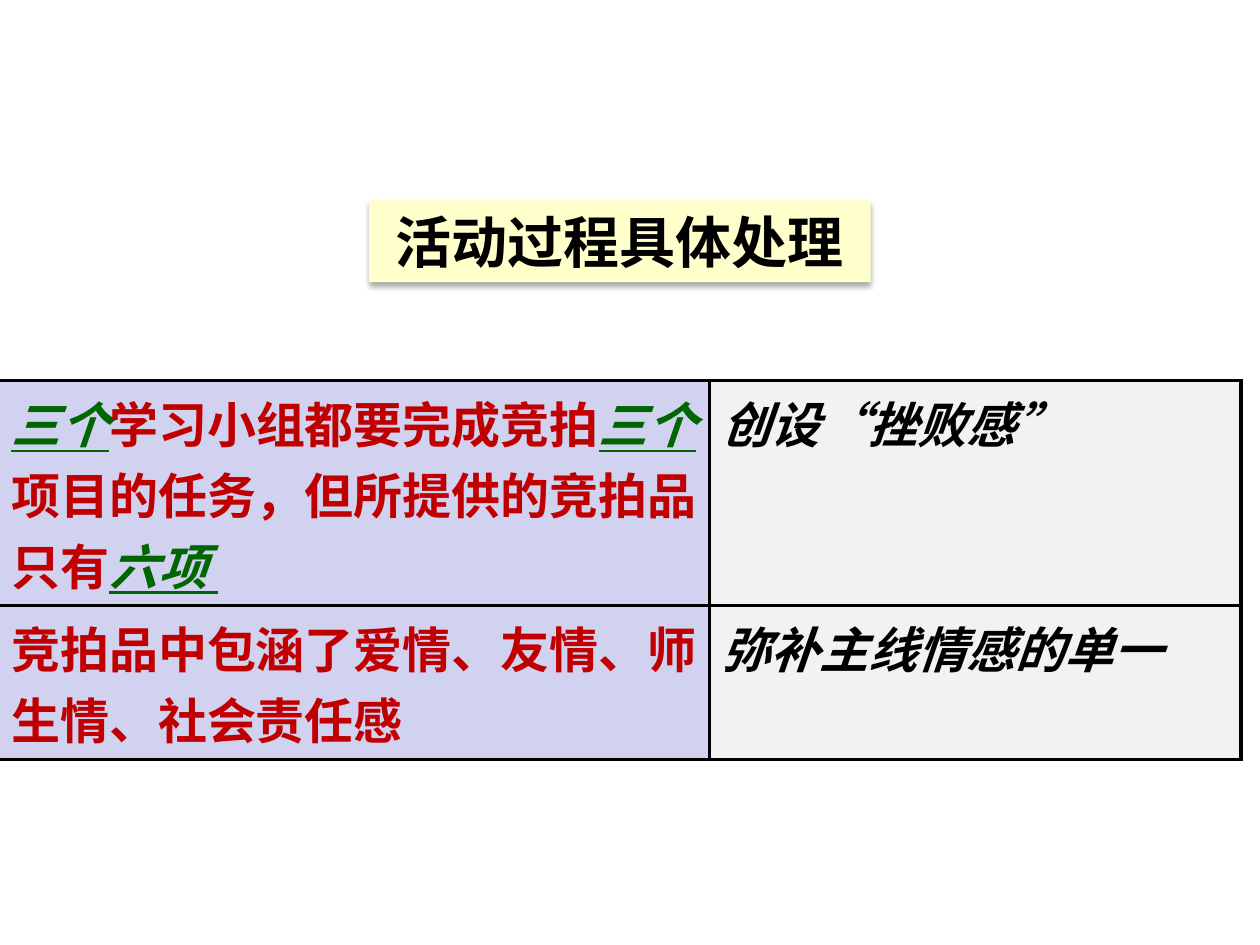
from lxml import etree
from pptx import Presentation
from pptx.dml.color import RGBColor
from pptx.enum.shapes import MSO_SHAPE
from pptx.enum.text import MSO_ANCHOR, PP_ALIGN
from pptx.oxml import parse_xml
from pptx.oxml.ns import nsdecls, qn
from pptx.util import Inches, Pt

RECT = MSO_SHAPE.RECTANGLE
MIDDLE = MSO_ANCHOR.MIDDLE
CENTER = PP_ALIGN.CENTER

FONT = "Noto Sans CJK SC"
COLORS = {
    "black": "000000",
    "red": "C00000",
    "green": "006600",
    "title": "FFFFCC",
    "event": "D1D1F0",
    "purpose": "F2F2F2",
}
# style: colour, italic, underline
STYLES = {
    "plain": ("red", False, False),
    "key": ("green", True, True),
    "purpose": ("black", True, False),
    "title": ("black", False, False),
}

TITLE = "活动过程具体处理"
ROWS = [
    (
        [
            ("三个", "key"),
            ("学习小组都要完成竞拍", "plain"),
            ("三个", "key"),
            ("项目的任务，但所提供的竞拍品只有", "plain"),
            ("六项 ", "key"),
        ],
        [("创设“挫败感”", "purpose")],
    ),
    (
        [("竞拍品中包涵了爱情、友情、师生情、社会责任感", "plain")],
        [("弥补主线情感的单一", "purpose")],
    ),
]
FILLS = ("event", "purpose")
COL_WIDTHS = (5.64, 4.22)
ROW_HEIGHTS = (1.5, 1.03)
BORDER = 2.25


def rgb(name):
    return RGBColor.from_string(COLORS[name])


def add_run(p, text, style, size):
    color, italic, underline = STYLES[style]
    r = p.add_run()
    r.text = text
    font = r.font
    font.name, font.size, font.bold = FONT, Pt(size), True
    font.italic, font.underline = italic, underline
    font.color.rgb = rgb(color)
    ea = etree.SubElement(font._element, qn("a:ea"))
    ea.set("typeface", FONT)


def add_shadow(sp, alpha, blur, dist):
    """Give a shape a soft black shadow straight below it."""
    sp.shadow.inherit = False
    effects = sp._element.spPr.find(qn("a:effectLst"))
    effects.append(parse_xml(
        f'<a:outerShdw {nsdecls("a")} blurRad="{Pt(blur)}" dist="{Pt(dist)}" '
        f'dir="5400000" rotWithShape="0"><a:srgbClr val="{COLORS["black"]}">'
        f'<a:alpha val="{alpha * 1000}"/></a:srgbClr></a:outerShdw>'))


def add_borders(cell):
    tcPr = cell._tc.get_or_add_tcPr()
    for i, side in enumerate(("lnL", "lnR", "lnT", "lnB")):
        tcPr.insert(i, parse_xml(
            f'<a:{side} {nsdecls("a")} w="{Pt(BORDER)}"><a:solidFill>'
            f'<a:srgbClr val="{COLORS["black"]}"/></a:solidFill></a:{side}>'))


def add_title(slide):
    sp = slide.shapes.add_shape(RECT, Inches(2.93), Inches(1.59), Inches(3.98), Inches(0.65))
    sp.fill.solid()
    sp.fill.fore_color.rgb = rgb("title")
    sp.line.fill.background()
    add_shadow(sp, 32, 3.5, 2.2)
    tf = sp.text_frame
    tf.word_wrap = True
    tf.vertical_anchor = MIDDLE
    p = tf.paragraphs[0]
    p.alignment = CENTER
    add_run(p, TITLE, "title", 32)


def add_process_table(slide):
    table = slide.shapes.add_table(
        len(ROWS), len(COL_WIDTHS), Inches(-0.01), Inches(3.02),
        Inches(sum(COL_WIDTHS)), Inches(sum(ROW_HEIGHTS))).table
    table.first_row = table.horz_banding = False
    for col, width in zip(table.columns, COL_WIDTHS):
        col.width = Inches(width)
    for row, height, contents in zip(table.rows, ROW_HEIGHTS, ROWS):
        row.height = Inches(height)
        for cell, runs, fill in zip(row.cells, contents, FILLS):
            cell.fill.solid()
            cell.fill.fore_color.rgb = rgb(fill)
            add_borders(cell)
            for text, style in runs:
                add_run(cell.text_frame.paragraphs[0], text, style, 28)


def main():
    prs = Presentation()
    prs.slide_width, prs.slide_height = Inches(10), Inches(7.5)
    slide = prs.slides.add_slide(prs.slide_layouts[6])
    add_title(slide)
    add_process_table(slide)
    prs.save("out.pptx")


if __name__ == "__main__":
    main()
